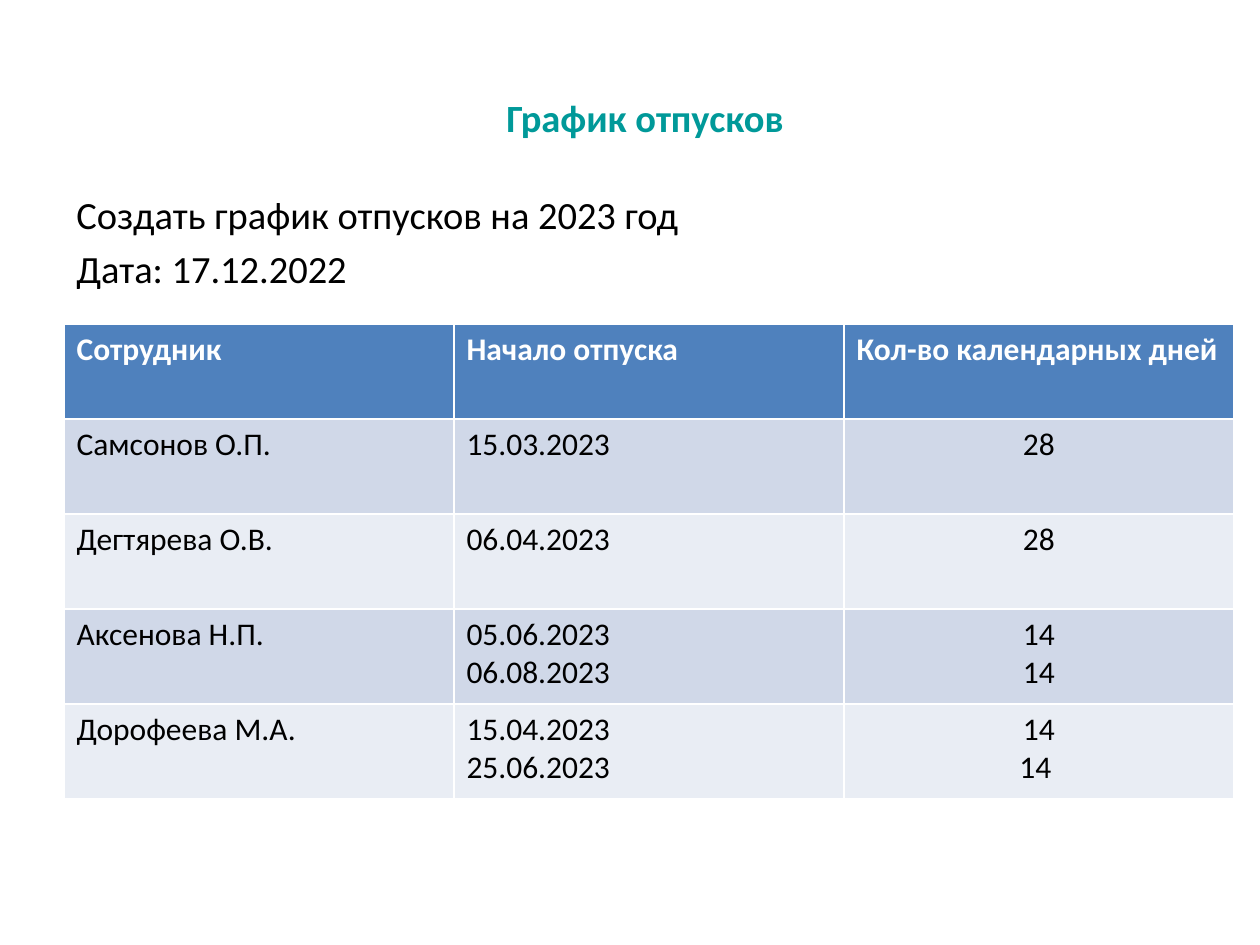
from pptx import Presentation
from pptx.dml.color import RGBColor
from pptx.enum.text import MSO_ANCHOR, PP_ALIGN
from pptx.util import Emu, Pt

PX_PER_INCH = 126
FONT = "Calibri"
TEAL = RGBColor(0x00, 0x99, 0x99)
BLACK = RGBColor(0x00, 0x00, 0x00)
WHITE = RGBColor(0xFF, 0xFF, 0xFF)
HEADER_BLUE = RGBColor(0x4F, 0x81, 0xBD)
BANDS = (RGBColor(0xD0, 0xD8, 0xE8), RGBColor(0xE9, 0xED, 0xF4))

VACATIONS = [
    ("Сотрудник", "Начало отпуска", "Кол-во календарных дней"),
    ("Самсонов О.П.", "15.03.2023", "28"),
    ("Дегтярева О.В.", "06.04.2023", "28"),
    ("Аксенова Н.П.", "05.06.2023\n06.08.2023", "14\n14"),
    ("Дорофеева М.А.", "15.04.2023\n25.06.2023", "14\n14 "),
]
DAYS_COL = 2


def px(n):
    return Emu(round(n * 914400 / PX_PER_INCH))


def write(tf, text, size, color, bold=False, align=PP_ALIGN.LEFT, before=0):
    """Fill a text frame, one paragraph per line of text."""
    tf.text = text
    for p in tf.paragraphs:
        p.alignment = align
        p.space_before = Pt(before)
        for r in p.runs:
            r.font.name = FONT
            r.font.size = Pt(size)
            r.font.bold = bold
            r.font.color.rgb = color


def add_text(slide, box, text, color, anchor=MSO_ANCHOR.TOP, **style):
    tf = slide.shapes.add_textbox(*map(px, box)).text_frame
    tf.word_wrap = True
    tf.vertical_anchor = anchor
    write(tf, text, 22, color, **style)


def add_vacation_table(slide, left, top, col_width, row_height):
    rows, cols = len(VACATIONS), len(VACATIONS[0])
    table = slide.shapes.add_table(
        rows, cols, px(left), px(top),
        px(cols * col_width), px(rows * row_height)).table
    for column in table.columns:
        column.width = px(col_width)
    for i, values in enumerate(VACATIONS):
        header = i == 0
        table.rows[i].height = px(row_height)
        for j, value in enumerate(values):
            cell = table.cell(i, j)
            cell.fill.solid()
            cell.fill.fore_color.rgb = HEADER_BLUE if header else BANDS[(i - 1) % 2]
            centered = j == DAYS_COL and not header
            write(cell.text_frame, value, 18, WHITE if header else BLACK,
                  bold=header,
                  align=PP_ALIGN.CENTER if centered else PP_ALIGN.LEFT)


def main():
    prs = Presentation()
    prs.slide_width, prs.slide_height = px(1260), px(945)
    slide = prs.slides.add_slide(prs.slide_layouts[6])
    add_text(slide, (74, 16, 1142, 203), "График отпусков", TEAL,
             anchor=MSO_ANCHOR.MIDDLE, bold=True, align=PP_ALIGN.CENTER)
    add_text(slide, (64, 185, 1150, 704),
             "Создать график отпусков на 2023 год\nДата: 17.12.2022", BLACK,
             align=PP_ALIGN.JUSTIFY, before=4.4)
    add_vacation_table(slide, left=64, top=324, col_width=390, row_height=95)
    prs.save("out.pptx")


if __name__ == "__main__":
    main()
